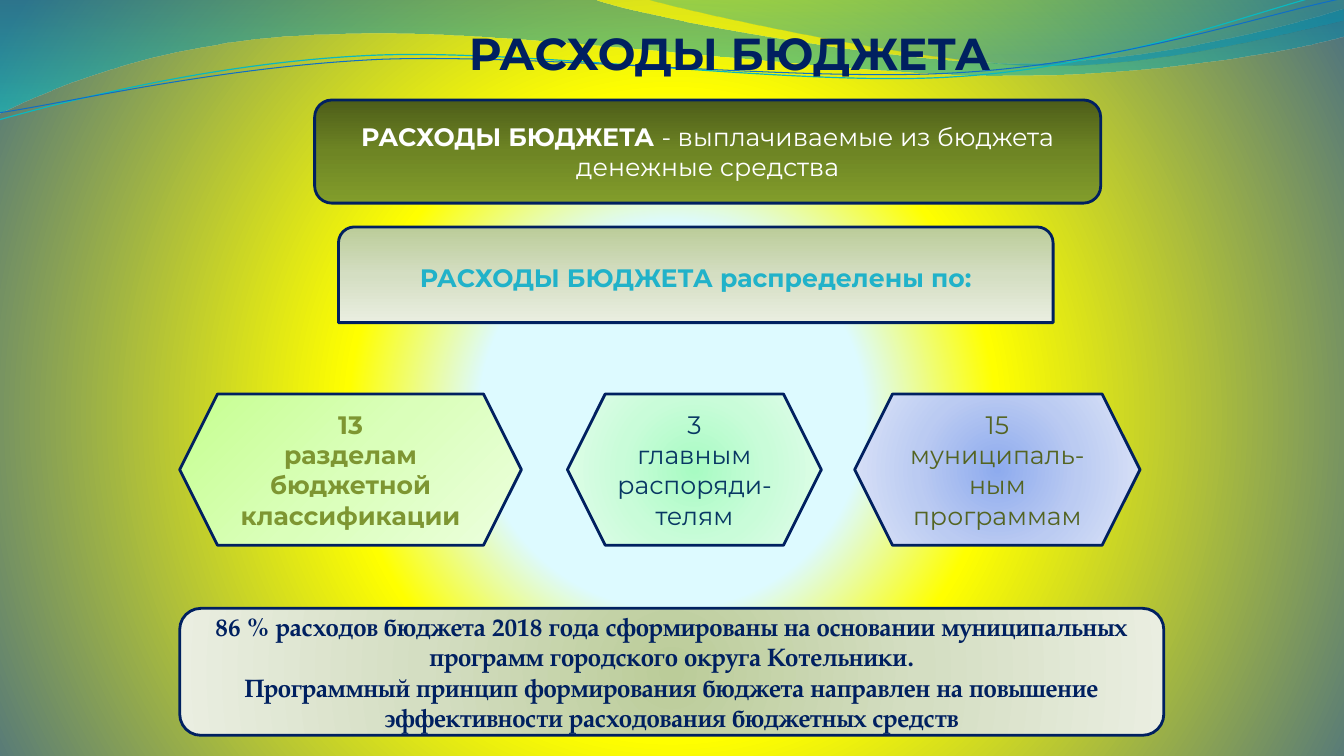
from lxml import etree
from pptx import Presentation
from pptx.dml.color import RGBColor
from pptx.enum.shapes import MSO_SHAPE as SHAPE
from pptx.enum.text import MSO_ANCHOR, PP_ALIGN
from pptx.oxml.ns import qn
from pptx.util import Cm, Pt

NAVY = RGBColor(0x00, 0x20, 0x60)
WHITE = RGBColor(0xFF, 0xFF, 0xFF)
TURQUOISE = RGBColor(0x21, 0xB2, 0xC9)
OLIVE = RGBColor(0x7E, 0x96, 0x32)
DARK_OLIVE = RGBColor(0x54, 0x64, 0x22)
DEEP_BLUE = RGBColor(0x08, 0x37, 0x63)
CYAN_LINE = RGBColor(0x0A, 0xB8, 0xBF)
BLUE_LINE = RGBColor(0x0F, 0x6F, 0xC6)

SANS, SERIF = "Montserrat", "TeX Gyre Pagella"
CENTER = (50, 50, 50, 50)


def evenly(*hexes):
    """Three gradient stops at 0, 50 and 100 percent, all opaque."""
    return [(50 * i, RGBColor.from_string(h), 100) for i, h in enumerate(hexes)]


# Gradient stops: position %, colour, opacity %
BACKGROUND = [(25, RGBColor(0xDD, 0xFA, 0xFF), 100),
              (42, RGBColor(0xFF, 0xFF, 0x00), 100),
              (100, RGBColor(0x52, 0x76, 0x7C), 100)]
WAVE_BACK = [(0, RGBColor(0x00, 0x74, 0xA1), 45), (100, RGBColor(0x00, 0xC6, 0xCF), 55)]
WAVE_FRONT = [(0, RGBColor(0x00, 0xA1, 0xA9), 30), (80, RGBColor(0x00, 0x8B, 0xBF), 45)]
MOSS = evenly("4D5D19", "6E8524", "829D2B")
SAGE = evenly("BBCC99", "D4DEC2", "EAEEE1")
LIME = evenly("C6FF90", "DAFFBA", "ECFFDE")
MINT = evenly("A8FBC3", "C9FCD9", "E4FDEC")
PERIWINKLE = evenly("8EABEE", "BBCBF2", "DEE5F8")

# Outlines in cm: start, then straight steps (x, y) or curves (x1, y1, x2, y2, x, y)
FILLED_WAVES = [
    (WAVE_BACK, [(0, 0), (14.91, -0.03),
                 (16.1, 0.43, 22.48, 1.6, 25.68, 1.6),
                 (28.91, 1.6, 32.46, 0.66, 33.86, 0.23), (33.91, 0.91),
                 (33.3, 1.12, 29.46, 1.93, 25.25, 1.91),
                 (21.06, 1.91, 12.93, 0.71, 8.71, 0.86),
                 (4.37, 0.91, 1.55, 2.11, -0.03, 2.87)]),
    (WAVE_FRONT, [(16.23, -0.03),
                  (17.25, 0.28, 23.09, 1.57, 26.04, 1.65),
                  (28.98, 1.75, 32.56, 0.81, 33.86, 0.53), (33.87, 0)]),
]
LINE_TILT = 357.3
LINE_WAVES = [
    (CYAN_LINE, 0.85, [(-0.08, 2.22),
                       (1.59, 1.84, 5.37, 1.03, 9.38, 1.04),
                       (13.4, 1.05, 20.03, 2.36, 24.1, 2.27),
                       (28.17, 2.21, 31.84, 0.91, 33.87, 0.55)]),
    (BLUE_LINE, 0.75, [(-0.05, 2.04),
                       (1.56, 1.89, 5.54, 1.14, 9.61, 1.15),
                       (13.65, 1.19, 20.19, 2.24, 24.23, 2.17),
                       (28.31, 2.11, 31.91, 1.06, 33.94, 0.75)]),
]

TITLE = "РАСХОДЫ БЮДЖЕТА"
HEX_TOP, HEX_HEIGHT = 9.93, 3.81

# Shape, box in cm, stops, angle or focus, font, colour, paragraphs of (text, bold)
PANELS = [
    (SHAPE.ROUNDED_RECTANGLE, (7.93, 2.52, 19.81, 2.6), MOSS, 90, SANS, WHITE,
     [[("РАСХОДЫ БЮДЖЕТА ", True),
       ("- выплачиваемые из бюджета денежные средства", False)]]),
    (SHAPE.ROUND_2_SAME_RECTANGLE, (8.53, 5.72, 18.01, 2.41), SAGE, 90, SANS, TURQUOISE,
     [[("РАСХОДЫ БЮДЖЕТА распределены по:", True)]]),
    (SHAPE.ROUNDED_RECTANGLE, (4.53, 15.33, 24.8, 3.2), SAGE, CENTER, SERIF, NAVY,
     [[("86 % расходов бюджета 2018 года сформированы на основании "
        "муниципальных программ городского округа Котельники.", True)],
      [("Программный принцип формирования бюджета направлен на повышение "
        "эффективности расходования бюджетных средств", True)]]),
    (SHAPE.HEXAGON, (4.53, HEX_TOP, 8.61, HEX_HEIGHT), LIME, 45, SANS, OLIVE,
     [[("13", True)], [("разделам бюджетной классификации", True)]]),
    (SHAPE.HEXAGON, (14.3, HEX_TOP, 6.4, HEX_HEIGHT), MINT, CENTER, SANS, DEEP_BLUE,
     [[("3", False)], [("главным распоряди-телям", False)]]),
    (SHAPE.HEXAGON, (21.54, HEX_TOP, 7.19, HEX_HEIGHT), PERIWINKLE, CENTER, SANS, DARK_OLIVE,
     [[("15 муниципаль-ным программам", False)]]),
]


def set_gradient(fill, props, stops, direction):
    """Direction is an angle in degrees, or a focus (left, top, right, bottom) in %."""
    fill.solid()
    solid = props.find(qn("a:solidFill"))
    grad = etree.Element(qn("a:gradFill"), rotWithShape="1")
    gs_list = etree.SubElement(grad, qn("a:gsLst"))
    for pos, color, opacity in stops:
        gs = etree.SubElement(gs_list, qn("a:gs"), pos=str(pos * 1000))
        clr = etree.SubElement(gs, qn("a:srgbClr"), val=str(color))
        if opacity < 100:
            etree.SubElement(clr, qn("a:alpha"), val=str(opacity * 1000))
    if isinstance(direction, tuple):
        focus = etree.SubElement(grad, qn("a:path"), path="circle")
        sides = {side: str(v * 1000) for side, v in zip("ltrb", direction)}
        etree.SubElement(focus, qn("a:fillToRect"), **sides)
    else:
        etree.SubElement(grad, qn("a:lin"), ang=str(direction * 60000), scaled="0")
    props.replace(solid, grad)


def add_wave(slide, outline, closed):
    """Draw the outline through all its points, then join curve points into Béziers."""
    points = [(Cm(seg[i]), Cm(seg[i + 1])) for seg in outline
              for i in range(0, len(seg), 2)]
    builder = slide.shapes.build_freeform(*points[0])
    builder.add_line_segments(points[1:], close=closed)
    sp = builder.convert_to_shape()
    sp.shadow.inherit = False
    steps = iter(sp._element.findall(".//" + qn("a:lnTo")))
    for seg in outline[1:]:
        parts = [next(steps) for _ in range(len(seg) // 2)]
        if len(parts) == 3:
            curve = etree.Element(qn("a:cubicBezTo"))
            parts[0].addprevious(curve)
            for part in parts:
                curve.append(part[0])
                part.getparent().remove(part)
    return sp


def move_to_master(sp, master):
    sp._element.nvSpPr.cNvPr.set("id", str(master.shapes._next_shape_id))
    master.shapes._spTree.append(sp._element)


def format_run(r, font, size, color, bold):
    r.font.name, r.font.size, r.font.bold = font, Pt(size), bold
    r.font.color.rgb = color


def add_panel(slide, shape, box, stops, direction, font, color, paragraphs):
    sp = slide.shapes.add_shape(shape, *map(Cm, box))
    sp.shadow.inherit = False
    set_gradient(sp.fill, sp._element.spPr, stops, direction)
    sp.line.color.rgb, sp.line.width = NAVY, Pt(2)
    tf = sp.text_frame
    tf.word_wrap, tf.vertical_anchor = True, MSO_ANCHOR.MIDDLE
    for i, runs in enumerate(paragraphs):
        p = tf.add_paragraph() if i else tf.paragraphs[0]
        p.alignment = PP_ALIGN.CENTER
        for text, bold in runs:
            r = p.add_run()
            r.text = text
            format_run(r, font, 18, color, bold)


def main():
    prs = Presentation()
    prs.slide_width, prs.slide_height = Cm(33.87), Cm(19.05)
    slide = prs.slides.add_slide(prs.slide_layouts[5])
    bg_fill = slide.background.fill
    bg_fill.solid()
    bg_props = slide._element.find(".//" + qn("p:bgPr"))
    set_gradient(bg_fill, bg_props, BACKGROUND, (10, 110, 10, 100))

    for stops, outline in FILLED_WAVES:
        sp = add_wave(slide, outline, True)
        set_gradient(sp.fill, sp._element.spPr, stops, 90)
        sp.line.fill.background()
        move_to_master(sp, prs.slide_master)
    for color, width, outline in LINE_WAVES:
        sp = add_wave(slide, outline, False)
        sp.rotation = LINE_TILT
        sp.fill.background()
        sp.line.color.rgb, sp.line.width = color, Pt(width)
        move_to_master(sp, prs.slide_master)

    title = slide.shapes.title
    title.left, title.top, title.width, title.height = map(Cm, (7.19, 0.51, 22.4, 1.63))
    title.text_frame.text = TITLE
    p = title.text_frame.paragraphs[0]
    p.alignment = PP_ALIGN.CENTER
    format_run(p.runs[0], SANS, 32, NAVY, True)

    for panel in PANELS:
        add_panel(slide, *panel)
    prs.save("out.pptx")


if __name__ == "__main__":
    main()
